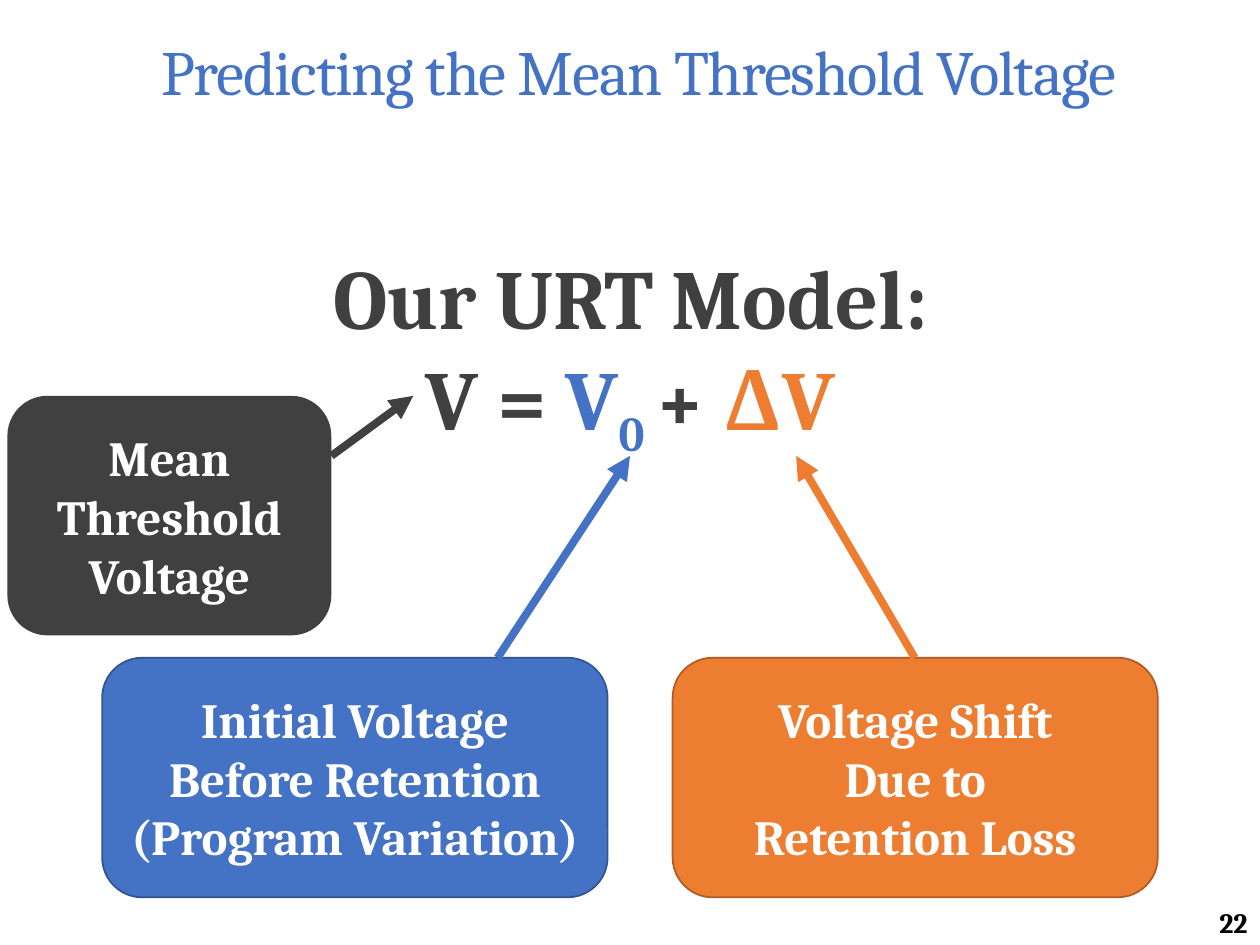
"""Build the slide that explains the mean threshold voltage model."""
from lxml import etree
from pptx import Presentation
from pptx.dml.color import RGBColor
from pptx.enum.shapes import MSO_CONNECTOR, MSO_SHAPE
from pptx.enum.text import MSO_ANCHOR, MSO_AUTO_SIZE, PP_ALIGN
from pptx.oxml.ns import qn
from pptx.util import Cm, Pt

CENTER, RIGHT = PP_ALIGN.CENTER, PP_ALIGN.RIGHT
MIDDLE, BOTTOM = MSO_ANCHOR.MIDDLE, MSO_ANCHOR.BOTTOM
NO_AUTOFIT = MSO_AUTO_SIZE.NONE
ROUNDED = MSO_SHAPE.ROUNDED_RECTANGLE
STRAIGHT = MSO_CONNECTOR.STRAIGHT
FONT = "Cambria"
COLORS = {
    "blue": "4472C4",
    "blue_edge": "325491",
    "orange": "ED7D31",
    "orange_edge": "AF5C24",
    "gray": "404040",
    "white": "FFFFFF",
    "black": "000000",
}


def color(name):
    return RGBColor.from_string(COLORS[name])


def format_paragraph(paragraph, size, color_name, alignment=CENTER, bold=True):
    paragraph.alignment = alignment
    for run in paragraph.runs:
        run.font.name = FONT
        run.font.size = Pt(size)
        run.font.bold = bold
        run.font.color.rgb = color(color_name)


presentation = Presentation()
presentation.slide_width = Cm(25.4)
presentation.slide_height = Cm(19.05)
slide = presentation.slides.add_slide(presentation.slide_layouts[5])

title = slide.shapes.title
title.left, title.top, title.width, title.height = Cm(0), Cm(0), Cm(25.4), Cm(3.02)
title.text_frame.text = "Predicting the Mean Threshold Voltage"
title.text_frame.auto_size = NO_AUTOFIT
title.text_frame.vertical_anchor = MIDDLE
heading = title.text_frame.paragraphs[0]
format_paragraph(heading, 36, "blue", bold=False)
heading.line_spacing = 0.9
heading._p.get_or_add_pPr().set("marL", str(Cm(0.36)))
heading.runs[0]._r.get_or_add_rPr().set("spc", "-70")

page_number = slide.shapes.add_textbox(Cm(22.76), Cm(18.11), Cm(2.64), Cm(0.94))
page_number.text_frame.text = "22"
page_number.text_frame.word_wrap = True
page_number.text_frame.vertical_anchor = BOTTOM
format_paragraph(page_number.text_frame.paragraphs[0], 16, "black", RIGHT)

model = slide.shapes.add_textbox(Cm(6.25), Cm(4.83), Cm(12.93), Cm(4.37))
model.text_frame.word_wrap = False
model.text_frame.text = "Our URT Model:"
format_paragraph(model.text_frame.paragraphs[0], 48, "gray")
equation = model.text_frame.add_paragraph()
terms = [("V = ", "gray"), ("V", "blue"), ("0 ", "blue"), ("+ ", "gray"), ("ΔV", "orange")]
for text, _ in terms:
    equation.add_run().text = text
format_paragraph(equation, 48, "gray")
for run, (_, color_name) in zip(equation.runs, terms):
    run.font.color.rgb = color(color_name)
equation.runs[2]._r.get_or_add_rPr().set("baseline", "-25000")

callouts = [
    ("Initial Voltage Before Retention\n(Program Variation)", "blue", "blue_edge",
     (2.06, 13.26, 10.19), (10.03, 13.26, 12.7, 9.19)),
    ("Voltage Shift\vDue to\vRetention Loss", "orange", "orange_edge",
     (13.56, 13.26, 9.78), (18.44, 13.26, 16.05, 9.19)),
    ("Mean Threshold Voltage", "gray", None,
     (0.15, 7.98, 6.53), (6.68, 9.19, 8.33, 7.98)),
]
for text, fill, edge, (left, top, width), arrow_ends in callouts:
    box = slide.shapes.add_shape(ROUNDED, Cm(left), Cm(top), Cm(width), Cm(4.83))
    box.shadow.inherit = False
    box.fill.solid()
    box.fill.fore_color.rgb = color(fill)
    if edge:
        box.line.color.rgb = color(edge)
        box.line.width = Pt(1)
    else:
        box.line.fill.background()
    box.text_frame.text = text
    box.text_frame.word_wrap = True
    box.text_frame.vertical_anchor = MIDDLE
    for paragraph in box.text_frame.paragraphs:
        format_paragraph(paragraph, 28, "white")

    arrow = slide.shapes.add_connector(STRAIGHT, *map(Cm, arrow_ends))
    arrow.line.color.rgb = color(fill)
    arrow.line.width = Pt(4.5)
    etree.SubElement(arrow.line._get_or_add_ln(), qn("a:tailEnd"), type="triangle")
    etree.SubElement(arrow._element.spPr, qn("a:effectLst"))

presentation.save("out.pptx")
